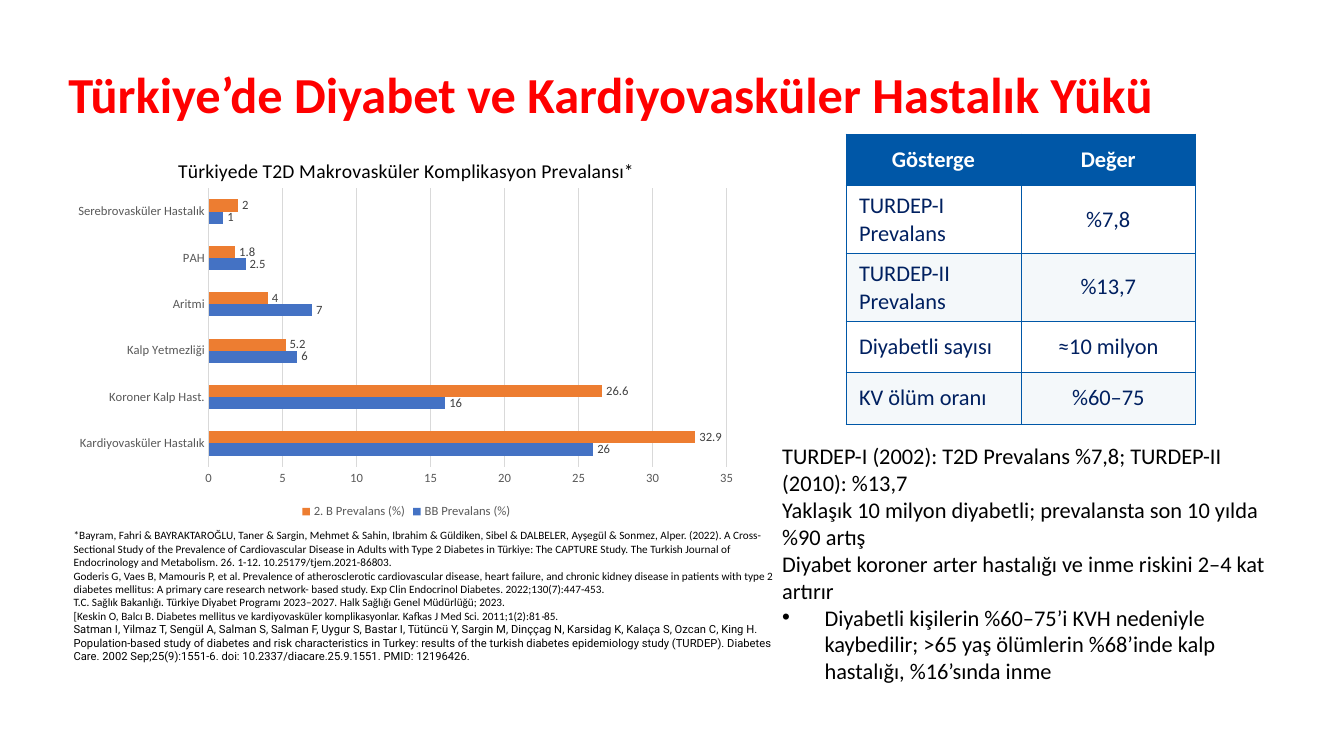
from dataclasses import dataclass

from lxml.etree import SubElement
from pptx import Presentation
from pptx.chart.data import CategoryChartData
from pptx.dml.color import RGBColor
from pptx.enum.chart import XL_CHART_TYPE as ChartType
from pptx.enum.chart import XL_LABEL_POSITION as LabelPosition
from pptx.enum.chart import XL_LEGEND_POSITION as LegendPosition
from pptx.enum.chart import XL_TICK_MARK as TickMark
from pptx.enum.text import MSO_ANCHOR as Anchor
from pptx.enum.text import PP_ALIGN as Align
from pptx.oxml import parse_xml
from pptx.oxml.ns import nsdecls, qn
from pptx.util import Inches, Pt


@dataclass(frozen=True)
class Theme:
    font: str = "Calibri"
    reference_font: str = "Roboto"
    title_color: str = "FF0000"
    text_color: str = "000000"
    table_blue: str = "0057A7"
    table_text: str = "002060"
    white: str = "FFFFFF"
    band: str = "F4F8FA"
    axis_text: str = "595959"
    label_text: str = "404040"
    grid: str = "D9D9D9"
    title_size: float = 36
    body_size: float = 16
    chart_title_size: float = 14
    chart_size: float = 9
    reference_size: float = 8


THEME = Theme()


@dataclass(frozen=True)
class Line:
    text: str
    font: str = THEME.font
    bullet: bool = False


@dataclass(frozen=True)
class TextBlock:
    left: float
    top: float
    width: float
    height: float
    lines: tuple[Line, ...]
    size: float
    color: str = THEME.text_color
    bold: bool = False
    inset: bool = True


@dataclass(frozen=True)
class Series:
    name: str
    values: tuple[float, ...]
    color: str


TEXT_BLOCKS = (
    TextBlock(0.58, 0.53, 12, 0.8, (Line("Türkiye’de Diyabet ve Kardiyovasküler Hastalık Yükü"),),
              THEME.title_size, THEME.title_color, bold=True),
    TextBlock(7.66, 4.21, 5.23, 2.76, (
        Line("TURDEP-I (2002): T2D Prevalans %7,8; TURDEP-II (2010): %13,7"),
        Line("Yaklaşık 10 milyon diyabetli; prevalansta son 10 yılda %90 artış"),
        Line("Diyabet koroner arter hastalığı ve inme riskini 2–4 kat artırır"),
        Line("Diyabetli kişilerin %60–75’i KVH nedeniyle kaybedilir; >65 yaş ölümlerin "
             "%68’inde kalp hastalığı, %16’sında inme", bullet=True),
    ), THEME.body_size),
    TextBlock(0.73, 5.36, 7.18, 1.1, (
        Line("*Bayram, Fahri & BAYRAKTAROĞLU, Taner & Sargin, Mehmet & Sahin, Ibrahim & Güldiken, "
             "Sibel & DALBELER, Ayşegül & Sonmez, Alper. (2022). A Cross-Sectional Study of the "
             "Prevalence of Cardiovascular Disease in Adults with Type 2 Diabetes in Türkiye: The "
             "CAPTURE Study. The Turkish Journal of Endocrinology and Metabolism. 26. 1-12. "
             "10.25179/tjem.2021-86803."),
        Line("Goderis G, Vaes B, Mamouris P, et al. Prevalence of atherosclerotic cardiovascular "
             "disease, heart failure, and chronic kidney disease in patients with type 2 diabetes "
             "mellitus: A primary care research network- based study. Exp Clin Endocrinol Diabetes. "
             "2022;130(7):447-453."),
        Line("T.C. Sağlık Bakanlığı. Türkiye Diyabet Programı 2023–2027. Halk Sağlığı Genel "
             "Müdürlüğü; 2023."),
        Line("[Keskin O, Balcı B. Diabetes mellitus ve kardiyovasküler komplikasyonlar. "
             "Kafkas J Med Sci. 2011;1(2):81‑85."),
        Line("Satman I, Yilmaz T, Sengül A, Salman S, Salman F, Uygur S, Bastar I, Tütüncü Y, "
             "Sargin M, Dinççag N, Karsidag K, Kalaça S, Ozcan C, King H. Population-based study of "
             "diabetes and risk characteristics in Turkey: results of the turkish diabetes "
             "epidemiology study (TURDEP). Diabetes Care. 2002 Sep;25(9):1551-6. "
             "doi: 10.2337/diacare.25.9.1551. PMID: 12196426.", THEME.reference_font),
    ), THEME.reference_size, inset=False),
)

INDICATORS = (
    ("Gösterge", "Değer"),
    ("TURDEP-I Prevalans", "%7,8"),
    ("TURDEP-II Prevalans", "%13,7"),
    ("Diyabetli sayısı", "≈10 milyon"),
    ("KV ölüm oranı", "%60–75"),
)
ROW_HEIGHTS = (0.51, 0.67, 0.67, 0.51, 0.51)

COMPLICATIONS = ("Kardiyovasküler Hastalık", "Koroner Kalp Hast.", "Kalp Yetmezliği",
                 "Aritmi", "PAH", "Serebrovasküler Hastalık")
PREVALENCES = (
    Series("BB Prevalans (%)", (26, 16, 6, 7, 2.5, 1), "4472C4"),
    Series("2. B Prevalans (%)", (32.9, 26.6, 5.2, 4, 1.8, 2), "ED7D31"),
)


def style_font(font, size: float, color: str, name: str = THEME.font, bold: bool = False) -> None:
    font.name, font.size, font.bold = name, Pt(size), bold
    font.color.rgb = RGBColor.from_string(color)


def add_text_block(slide, block: TextBlock) -> None:
    box = slide.shapes.add_textbox(*map(Inches, (block.left, block.top, block.width, block.height)))
    frame = box.text_frame
    frame.word_wrap = True
    frame.vertical_anchor = Anchor.MIDDLE
    if not block.inset:
        frame.margin_left = frame.margin_right = frame.margin_top = frame.margin_bottom = 0
    for index, line in enumerate(block.lines):
        paragraph = frame.add_paragraph() if index else frame.paragraphs[0]
        if line.bullet:
            properties = paragraph._p.get_or_add_pPr()
            properties.set("marL", str(Inches(0.42)))
            properties.set("indent", str(-Inches(0.42)))
            SubElement(properties, qn("a:buFont")).set("typeface", "Arial")
            SubElement(properties, qn("a:buChar")).set("char", "•")
        run = paragraph.add_run()
        run.text = line.text
        style_font(run.font, block.size, block.color, line.font, block.bold)


def add_borders(cell) -> None:
    properties = cell._tc.get_or_add_tcPr()
    for side in "LRTB":
        properties.append(parse_xml(
            f'<a:ln{side} {nsdecls("a")} w="{Pt(0.5)}"><a:solidFill>'
            f'<a:srgbClr val="{THEME.table_blue}"/></a:solidFill></a:ln{side}>'))


def add_indicator_table(slide) -> None:
    table = slide.shapes.add_table(len(INDICATORS), 2, Inches(8.39), Inches(1.33),
                                   Inches(3.47), Inches(sum(ROW_HEIGHTS))).table
    for row_index, (row, height) in enumerate(zip(INDICATORS, ROW_HEIGHTS)):
        table.rows[row_index].height = Inches(height)
        header = row_index == 0
        fill = THEME.table_blue if header else (THEME.band, THEME.white)[row_index % 2]
        for column_index, text in enumerate(row):
            cell = table.cell(row_index, column_index)
            add_borders(cell)
            cell.fill.solid()
            cell.fill.fore_color.rgb = RGBColor.from_string(fill)
            cell.vertical_anchor = Anchor.MIDDLE
            cell.margin_left = cell.margin_right = Inches(0.13)
            cell.margin_top = cell.margin_bottom = Inches(0.07)
            paragraph = cell.text_frame.paragraphs[0]
            paragraph.alignment = Align.CENTER if header or column_index else Align.LEFT
            run = paragraph.add_run()
            run.text = text
            style_font(run.font, THEME.body_size, THEME.white if header else THEME.table_text,
                       bold=header)


def set_layout(element, index: int, target: str = "", **fractions: float) -> None:
    """Place a chart part by fractions of the chart area."""
    for old in element.findall(qn("c:layout")):
        element.remove(old)
    parts = f'<c:layoutTarget val="{target}"/>' if target else ""
    parts += '<c:xMode val="edge"/><c:yMode val="edge"/>'
    parts += "".join(f'<c:{key} val="{value}"/>' for key, value in fractions.items())
    element.insert(index, parse_xml(
        f'<c:layout {nsdecls("c")}><c:manualLayout>{parts}</c:manualLayout></c:layout>'))


def add_prevalence_chart(slide) -> None:
    data = CategoryChartData()
    data.categories = COMPLICATIONS
    for series in PREVALENCES:
        data.add_series(series.name, series.values)
    chart = slide.shapes.add_chart(ChartType.BAR_CLUSTERED, Inches(0.65), Inches(1.33),
                                   Inches(6.76), Inches(3.86), data).chart
    style_font(chart.font, 10, THEME.text_color)
    run = chart.chart_title.text_frame.paragraphs[0].add_run()
    run.text = "Türkiyede T2D Makrovasküler Komplikasyon Prevalansı*"
    style_font(run.font, THEME.chart_title_size, THEME.text_color)
    set_layout(chart.chart_title._element, 1, x=0.16, y=0.05)
    set_layout(chart._chartSpace.chart.plotArea, 0, "inner", x=0.21, y=0.14, w=0.76, h=0.715)

    chart.has_legend = True
    chart.legend.position = LegendPosition.BOTTOM
    chart.legend.include_in_layout = False
    style_font(chart.legend.font, THEME.chart_size, THEME.axis_text)
    for axis in (chart.category_axis, chart.value_axis):
        axis.major_tick_mark = axis.minor_tick_mark = TickMark.NONE
        style_font(axis.tick_labels.font, THEME.chart_size, THEME.axis_text)
    chart.value_axis.format.line.fill.background()
    chart.value_axis.minimum_scale, chart.value_axis.maximum_scale = 0, 35
    chart.value_axis.major_unit = 5
    for line in (chart.category_axis.format.line, chart.value_axis.major_gridlines.format.line):
        line.color.rgb = RGBColor.from_string(THEME.grid)
        line.width = Pt(0.75)

    plot = chart.plots[0]
    plot.gap_width, plot.overlap, plot.vary_by_categories = 182, 0, False
    for drawn, series in zip(plot.series, PREVALENCES):
        drawn.format.fill.solid()
        drawn.format.fill.fore_color.rgb = RGBColor.from_string(series.color)
        labels = drawn.data_labels
        labels.show_value = True
        labels.position = LabelPosition.OUTSIDE_END
        style_font(labels.font, THEME.chart_size, THEME.label_text)


def main() -> None:
    presentation = Presentation()
    presentation.slide_width, presentation.slide_height = Inches(13.33), Inches(7.5)
    slide = presentation.slides.add_slide(presentation.slide_layouts[6])
    for block in TEXT_BLOCKS:
        add_text_block(slide, block)
    add_indicator_table(slide)
    add_prevalence_chart(slide)
    presentation.save("out.pptx")


if __name__ == "__main__":
    main()
